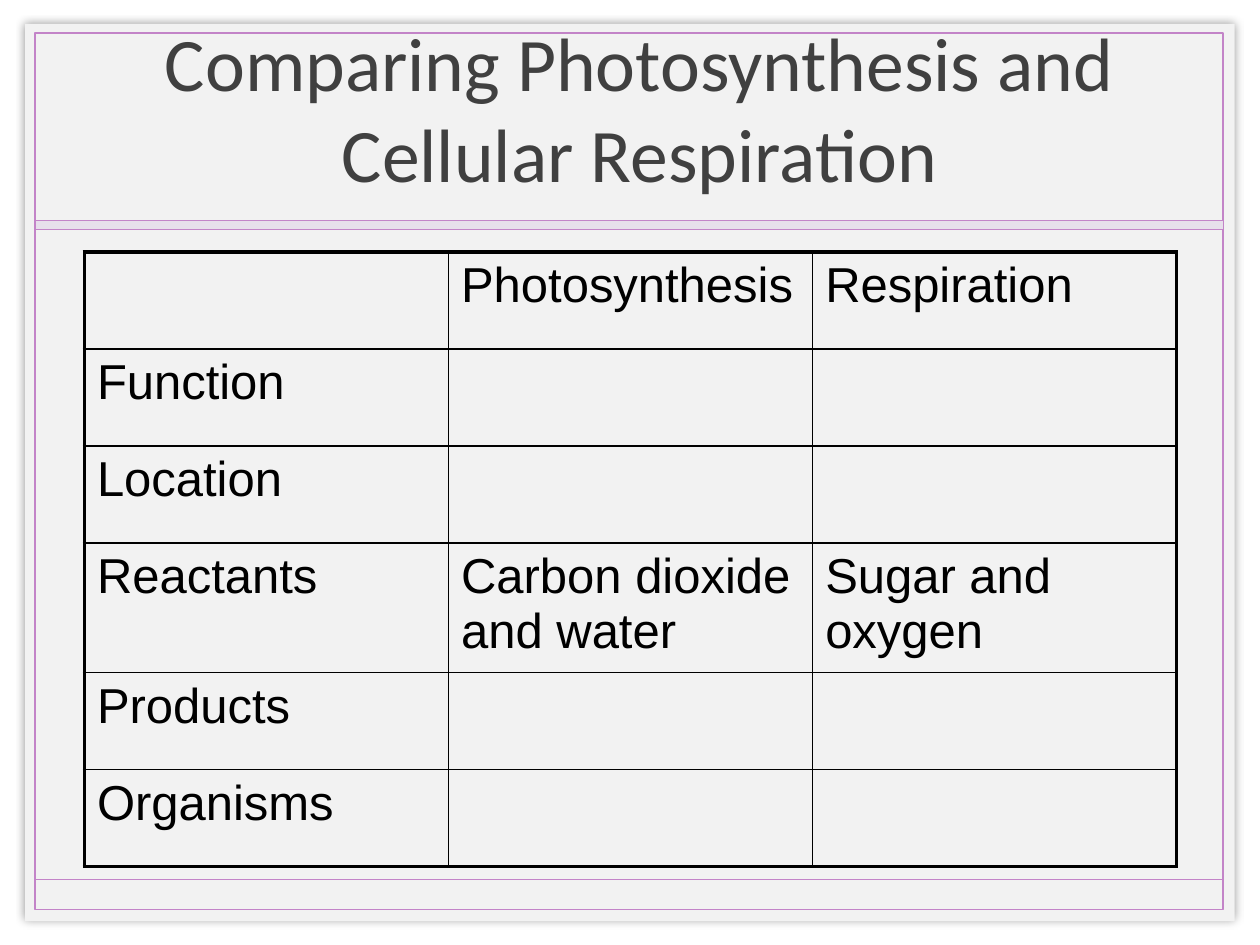
from dataclasses import dataclass
from typing import Optional

from lxml.etree import SubElement
from pptx import Presentation
from pptx.dml.color import RGBColor
from pptx.enum.shapes import MSO_CONNECTOR, MSO_SHAPE
from pptx.enum.text import MSO_ANCHOR, PP_ALIGN
from pptx.oxml.ns import qn
from pptx.util import Inches, Pt

COLORS = {
    "panel": "F2F2F2",
    "frame": "C384C8",
    "band": "E7DFEB",
    "title": "404040",
    "ink": "000000",
}
TITLE_FONT = {"name": "Calibri", "size": Pt(43.2)}
CELL_FONT = {"name": "Arial", "size": Pt(28)}
THIN, THICK = 1, 2.25

COMPARISON = [
    ["", "Photosynthesis", "Respiration"],
    ["Function", "", ""],
    ["Location", "", ""],
    ["Reactants", "Carbon dioxide and water", "Sugar and oxygen"],
    ["Products", "", ""],
    ["Organisms", "", ""],
]
ROW_HEIGHT, TALL_ROW_HEIGHT, COLUMN_WIDTH = 0.77, 1.03, 2.89


@dataclass
class Box:
    left: float
    top: float
    width: float
    height: float
    fill: Optional[str] = None
    line: Optional[str] = None
    line_width: float = THIN

    def lengths(self) -> list:
        return [Inches(v) for v in (self.left, self.top, self.width, self.height)]


PANEL = Box(0.2, 0.19, 9.6, 7.12, fill="panel")
FRAME = Box(0.28, 0.26, 9.43, 6.96, line="frame")
BAND = Box(0.28, 1.75, 9.43, 0.07, fill="band", line="frame", line_width=0.25)
TITLE = Box(0.35, 0.06, 9.45, 1.57)
TABLE = Box(0.67, 2, 8.67, 4.88)


def rgb(color: str) -> RGBColor:
    return RGBColor.from_string(COLORS[color])


def draw_box(slide, box: Box):
    rectangle = slide.shapes.add_shape(MSO_SHAPE.RECTANGLE, *box.lengths())
    rectangle.shadow.inherit = False
    if box.fill:
        rectangle.fill.solid()
        rectangle.fill.fore_color.rgb = rgb(box.fill)
    else:
        rectangle.fill.background()
    if box.line:
        rectangle.line.color.rgb = rgb(box.line)
        rectangle.line.width = Pt(box.line_width)
    else:
        rectangle.line.fill.background()
    return rectangle


def add_soft_shadow(rectangle, blur: float, opacity: int) -> None:
    effects = rectangle._element.spPr.find(qn("a:effectLst"))
    shadow = SubElement(effects, qn("a:outerShdw"), blurRad=str(Pt(blur)), dist="0",
                        algn="ctr", rotWithShape="0")
    color = SubElement(shadow, qn("a:srgbClr"), val=COLORS["ink"])
    SubElement(color, qn("a:alpha"), val=str(opacity * 1000))


def draw_footer_rule(slide, y: float) -> None:
    rule = slide.shapes.add_connector(
        MSO_CONNECTOR.STRAIGHT, Inches(FRAME.left), Inches(y),
        Inches(FRAME.left + FRAME.width), Inches(y))
    rule.line.color.rgb = rgb("frame")
    rule.line.width = Pt(THIN)
    SubElement(rule._element.spPr, qn("a:effectLst"))


def write(paragraph, text: str, font: dict, color: str) -> None:
    run = paragraph.add_run()
    run.text = text
    for attribute, value in font.items():
        setattr(run.font, attribute, value)
    run.font.color.rgb = rgb(color)


def draw_title(slide, text: str) -> None:
    heading = slide.shapes.add_textbox(*TITLE.lengths()).text_frame
    heading.word_wrap = True
    heading.vertical_anchor = MSO_ANCHOR.MIDDLE
    heading.paragraphs[0].alignment = PP_ALIGN.CENTER
    write(heading.paragraphs[0], text, TITLE_FONT, "title")


def set_borders(cell, widths: dict) -> None:
    properties = cell._tc.get_or_add_tcPr()
    for side, width in widths.items():
        border = SubElement(properties, qn(f"a:ln{side}"), w=str(Pt(width)))
        fill = SubElement(border, qn("a:solidFill"))
        SubElement(fill, qn("a:srgbClr"), val=COLORS["ink"])


def set_space_before(paragraph, percent: int) -> None:
    """Space before as a share of the line, which python-pptx does not offer."""
    spacing = SubElement(paragraph._p.get_or_add_pPr(), qn("a:spcBef"))
    SubElement(spacing, qn("a:spcPct"), val=str(percent * 1000))


def draw_comparison(slide) -> None:
    last_row, last_column = len(COMPARISON) - 1, len(COMPARISON[0]) - 1
    table = slide.shapes.add_table(last_row + 1, last_column + 1, *TABLE.lengths()).table
    table.first_row = table.horz_banding = False
    for column in table.columns:
        column.width = Inches(COLUMN_WIDTH)
    for r, texts in enumerate(COMPARISON):
        tall = any(texts[1:]) and r > 0
        table.rows[r].height = Inches(TALL_ROW_HEIGHT if tall else ROW_HEIGHT)
        for c, text in enumerate(texts):
            cell = table.cell(r, c)
            on_edge = {"L": c == 0, "R": c == last_column, "T": r == 0, "B": r == last_row}
            set_borders(cell, {side: THICK if edge else THIN for side, edge in on_edge.items()})
            cell.fill.background()
            if text:
                paragraph = cell.text_frame.paragraphs[0]
                set_space_before(paragraph, 20)
                write(paragraph, text, CELL_FONT, "ink")


def main() -> None:
    presentation = Presentation()
    presentation.slide_width, presentation.slide_height = Inches(10), Inches(7.5)
    slide = presentation.slides.add_slide(presentation.slide_layouts[6])
    add_soft_shadow(draw_box(slide, PANEL), blur=5, opacity=40)
    draw_box(slide, FRAME)
    draw_footer_rule(slide, 6.98)
    draw_box(slide, BAND)
    draw_comparison(slide)
    draw_title(slide, "Comparing Photosynthesis and Cellular Respiration")
    presentation.save("out.pptx")


if __name__ == "__main__":
    main()
